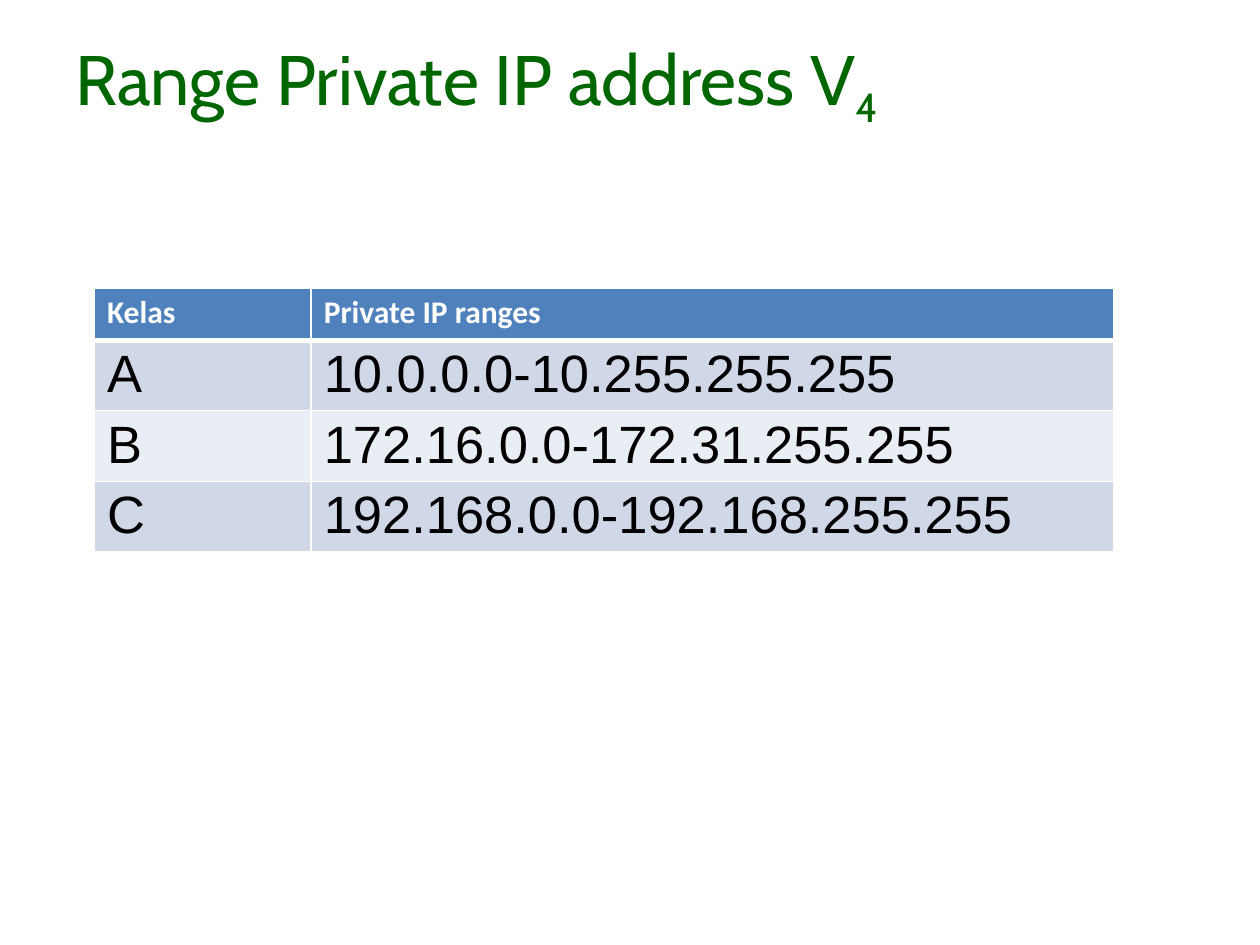
from lxml.etree import SubElement as Sub
from pptx import Presentation
from pptx.dml.color import RGBColor as Rgb
from pptx.enum.text import MSO_ANCHOR as Anchor, MSO_AUTO_SIZE as Fit, PP_ALIGN as Align
from pptx.oxml.ns import qn
from pptx.util import Inches, Pt

HUES = {"title": "006600", "head": "4F81BD", "odd": "D0D8E8",
        "even": "E9EDF4", "rule": "FFFFFF", "text": "000000"}
ROWS = [("Kelas", "Private IP ranges"),
        ("A", "10.0.0.0-10.255.255.255"),
        ("B", "172.16.0.0-172.31.255.255"),
        ("C", "192.168.0.0-192.168.255.255")]


class Deck:
    """Holds the style and the current slide."""

    def __init__(self):
        self.show = Presentation()
        self.show.slide_width, self.show.slide_height = Inches(10), Inches(7.5)
        self.slide = self.show.slides.add_slide(self.show.slide_layouts[5])

    def style(self, font, name, size, hue, bold=False):
        font.name, font.size, font.bold = name, Pt(size), bold
        font.color.rgb = Rgb.from_string(HUES[hue])

    def title(self, text, sub, left, top, width, height):
        """Title that ends in a subscript."""
        box = self.slide.shapes.title
        box.left, box.top = Inches(left), Inches(top)
        box.width, box.height = Inches(width), Inches(height)
        frame = box.text_frame
        frame.text = text
        frame.word_wrap, frame.auto_size = True, Fit.NONE
        frame.vertical_anchor = Anchor.BOTTOM
        para = frame.paragraphs[0]
        para.alignment = Align.LEFT
        low = para.add_run()
        low.text = sub
        for run in para.runs:
            self.style(run.font, "Cabin", 40, "title")
        low._r.get_or_add_rPr().set("baseline", "-25000")

    def edge(self, cell, side, width):
        line = Sub(cell._tc.get_or_add_tcPr(), qn(f"a:ln{side}"), w=str(Pt(width)))
        Sub(Sub(line, qn("a:solidFill")), qn("a:srgbClr"), val=HUES["rule"])

    def cell(self, cell, text, row):
        head = row == 0
        cell.text = text
        cell.margin_top = cell.margin_bottom = Inches(0.04)
        for side in "LRTB":
            thick = (row, side) in ((0, "B"), (1, "T"))
            self.edge(cell, side, 3 if thick else 1)
        cell.fill.solid()
        hue = "head" if head else "odd" if row % 2 else "even"
        cell.fill.fore_color.rgb = Rgb.from_string(HUES[hue])
        look = ("Calibri", 18, "rule", True) if head else ("Arial", 30, "text")
        self.style(cell.text_frame.paragraphs[0].runs[0].font, *look)

    def table(self, rows, left, top, widths, heights):
        size = map(Inches, (left, top, sum(widths), sum(heights)))
        grid = self.slide.shapes.add_table(len(rows), len(widths), *size).table
        for col, width in zip(grid.columns, widths):
            col.width = Inches(width)
        for r, (row, height) in enumerate(zip(rows, heights)):
            grid.rows[r].height = Inches(height)
            for c, text in enumerate(row):
                self.cell(grid.cell(r, c), text, r)


def main():
    deck = Deck()
    deck.title("Range Private IP address V", "4", 0.5, 0.42, 7.92, 0.67)
    deck.table(ROWS, 0.75, 2.29, [1.72, 6.37], [0.41] + [0.56] * 3)
    deck.show.save("out.pptx")


if __name__ == "__main__":
    main()
